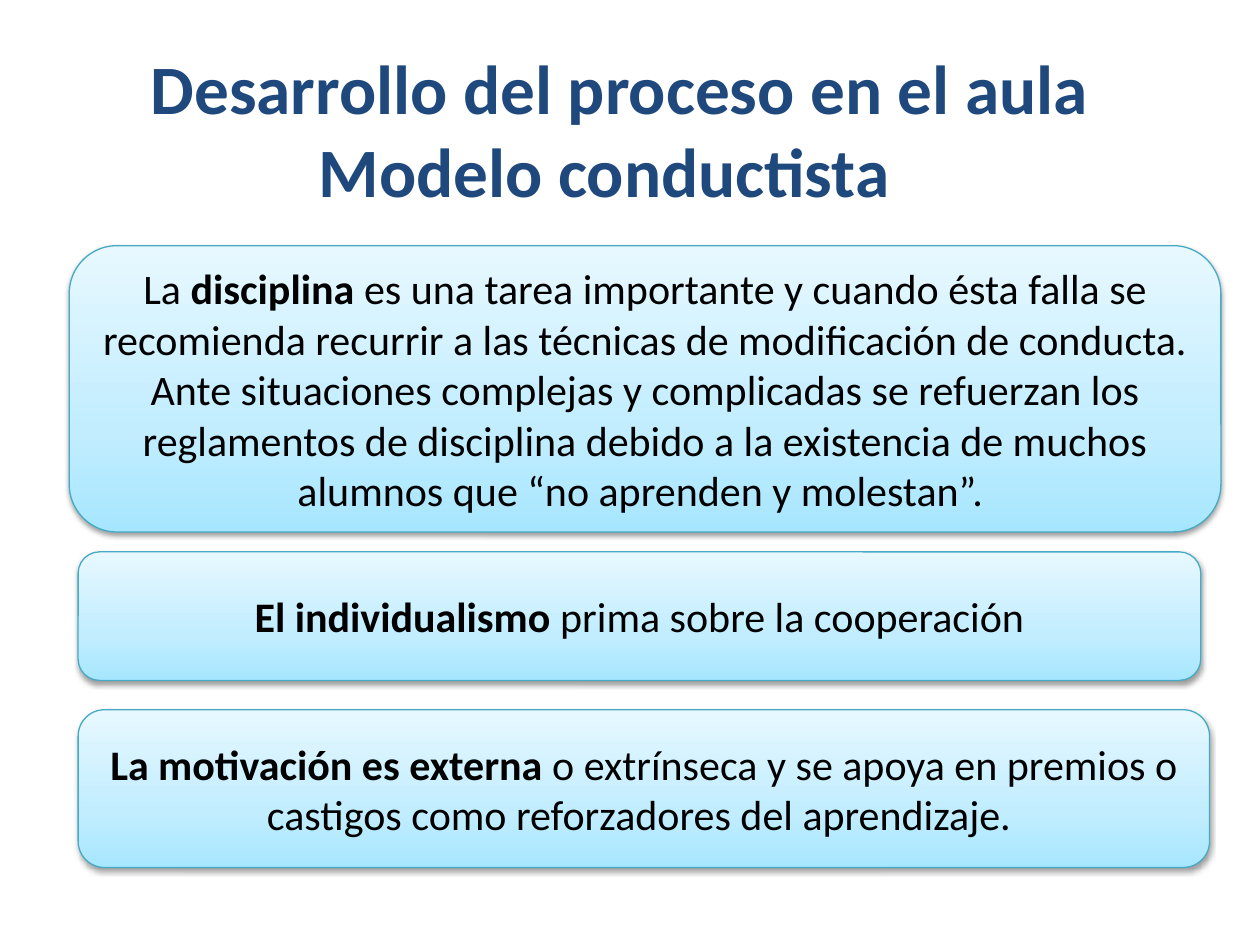
from dataclasses import dataclass

from lxml.etree import SubElement
from pptx import Presentation
from pptx.dml.color import RGBColor
from pptx.enum.shapes import MSO_SHAPE
from pptx.enum.text import MSO_ANCHOR, MSO_AUTO_SIZE, PP_ALIGN
from pptx.oxml.ns import qn
from pptx.util import Inches, Pt


@dataclass(frozen=True)
class Theme:
    font: str = "Calibri"
    title_size: float = 39.6
    body_size: float = 24
    title_color: str = "1F497D"
    body_color: str = "000000"
    line_color: str = "46AAC5"
    shadow_color: str = "000000"
    gradient: tuple = ((0, "A7E6FF"), (35, "C1EDFF"), (100, "E7F8FF"))


THEME = Theme()
WIDTH, HEIGHT = Inches(10), Inches(7.5)

TITLE = "Desarrollo del proceso en el aula\vModelo conductista  "
TITLE_BOX = (0.023, 0.052, 0.938, 0.167)
CARDS = [
    ((0.055, 0.26, 0.914, 0.303), [
        [("La ", False), ("disciplina", True),
         (" es una tarea importante y cuando ésta falla se recomienda recurrir "
          "a las técnicas de modificación de conducta.", False)],
        [("Ante situaciones complejas y complicadas se refuerzan los reglamentos "
          "de disciplina debido a la existencia de muchos alumnos que "
          "“no aprenden y molestan”. ", False)],
    ]),
    ((0.062, 0.584, 0.891, 0.136), [
        [("El individualismo ", True), ("prima sobre la cooperación", False)],
    ]),
    ((0.062, 0.751, 0.898, 0.167), [
        [("La motivación es externa ", True),
         ("o extrínseca y se apoya en premios o castigos como reforzadores "
          "del aprendizaje. ", False)],
    ]),
]


def to_slide(box):
    left, top, width, height = box
    return (round(left * WIDTH), round(top * HEIGHT),
            round(width * WIDTH), round(height * HEIGHT))


def format_font(font, size, color, bold):
    font.name = THEME.font
    font.size = Pt(size)
    font.bold = bold
    font.color.rgb = RGBColor.from_string(color)


def add_color(parent, color):
    return SubElement(parent, qn("a:srgbClr"), val=color)


def apply_gradient(shape):
    shape.fill.gradient()
    shape.fill.gradient_angle = 90
    stops = shape.element.spPr.find(".//" + qn("a:gsLst"))
    for stop in list(stops):
        stops.remove(stop)
    for position, color in THEME.gradient:
        add_color(SubElement(stops, qn("a:gs"), pos=str(position * 1000)), color)


def apply_shadow(shape):
    shape.shadow.inherit = False
    effects = shape.element.spPr.find(qn("a:effectLst"))
    shadow = SubElement(effects, qn("a:outerShdw"), blurRad=str(Pt(3.1)),
                        dist=str(Pt(1.6)), dir="5400000", rotWithShape="0")
    SubElement(add_color(shadow, THEME.shadow_color), qn("a:alpha"), val="38000")


def place_title(slide, box):
    title = slide.shapes.title
    title.left, title.top, title.width, title.height = to_slide(box)
    frame = title.text_frame
    frame.text = TITLE
    frame.word_wrap = True
    frame.auto_size = MSO_AUTO_SIZE.NONE
    frame.vertical_anchor = MSO_ANCHOR.MIDDLE
    paragraph = frame.paragraphs[0]
    paragraph.alignment = PP_ALIGN.CENTER
    for run in paragraph.runs:
        format_font(run.font, THEME.title_size, THEME.title_color, True)


def add_card(slide, box, paragraphs):
    card = slide.shapes.add_shape(MSO_SHAPE.ROUNDED_RECTANGLE, *to_slide(box))
    apply_gradient(card)
    card.line.color.rgb = RGBColor.from_string(THEME.line_color)
    card.line.width = Pt(0.75)
    apply_shadow(card)
    frame = card.text_frame
    frame.word_wrap = True
    frame.vertical_anchor = MSO_ANCHOR.MIDDLE
    for index, pieces in enumerate(paragraphs):
        paragraph = frame.add_paragraph() if index else frame.paragraphs[0]
        paragraph.alignment = PP_ALIGN.CENTER
        for text, bold in pieces:
            run = paragraph.add_run()
            run.text = text
            format_font(run.font, THEME.body_size, THEME.body_color, bold)


def main():
    presentation = Presentation()
    presentation.slide_width, presentation.slide_height = WIDTH, HEIGHT
    slide = presentation.slides.add_slide(presentation.slide_layouts[5])
    place_title(slide, TITLE_BOX)
    for box, paragraphs in CARDS:
        add_card(slide, box, paragraphs)
    presentation.save("out.pptx")


if __name__ == "__main__":
    main()
